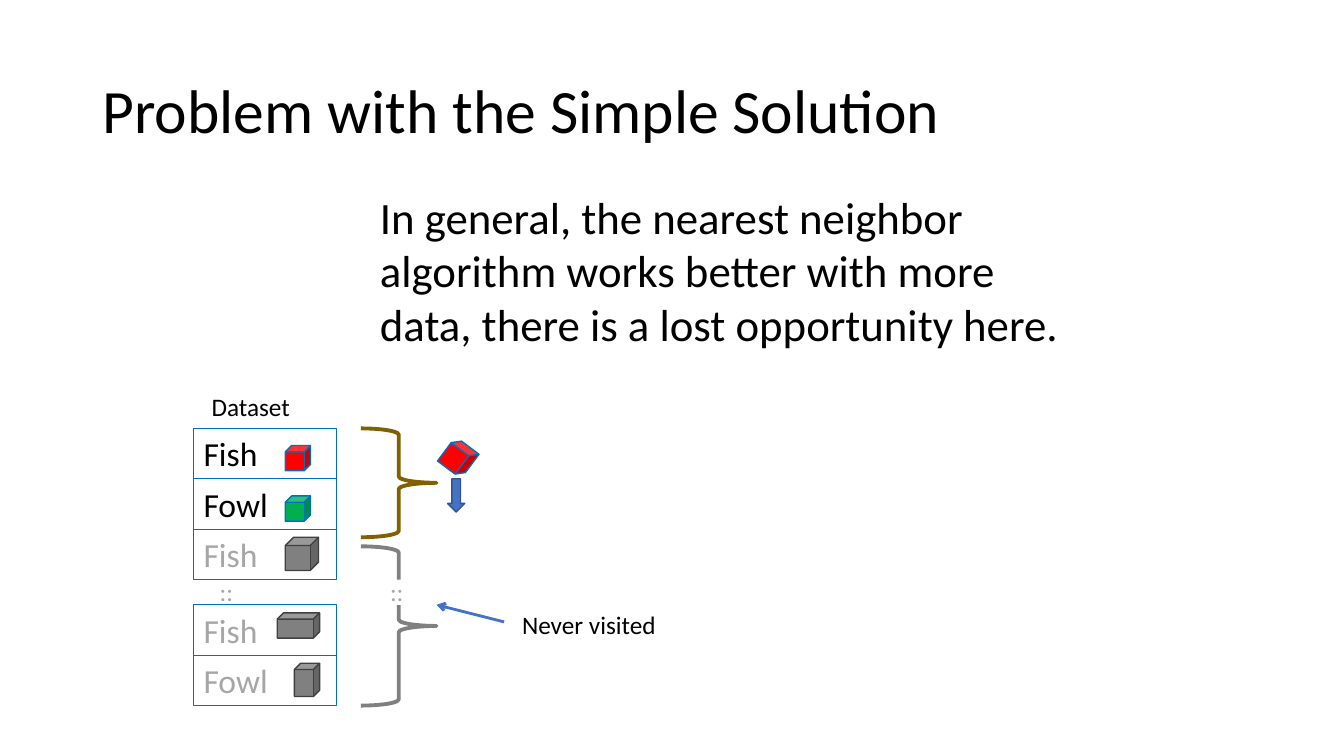
"""Build the slide about the problem with the simple nearest neighbor solution."""
from lxml import etree
from pptx import Presentation
from pptx.dml.color import RGBColor
from pptx.enum.shapes import MSO_CONNECTOR, MSO_SHAPE
from pptx.enum.text import MSO_ANCHOR, PP_ALIGN
from pptx.oxml.ns import qn
from pptx.util import Inches, Pt

COLORS = {
    "black": "000000", "white": "FFFFFF", "faded": "A6A6A6", "gray": "808080",
    "dark gray": "404040", "blue": "0070C0", "red": "FF0000", "green": "00B050",
    "arrow": "4472C4", "arrow edge": "325491", "brown": "806000",
}

presentation = Presentation()
presentation.slide_width = Inches(13.33)
presentation.slide_height = Inches(7.5)
slide = presentation.slides.add_slide(presentation.slide_layouts[6])


def write(shape, text, size, color="black", wrap=True, anchor=MSO_ANCHOR.TOP):
    frame = shape.text_frame
    frame.word_wrap = wrap
    frame.vertical_anchor = anchor
    paragraph = frame.paragraphs[0]
    paragraph.text = text
    paragraph.alignment = PP_ALIGN.LEFT
    paragraph.font.name = "Calibri"
    paragraph.font.size = Pt(size)
    paragraph.font.color.rgb = RGBColor.from_string(COLORS[color])
    return paragraph


def draw(kind, box, fill=None, line=None, width=1):
    shape = slide.shapes.add_shape(kind, *map(Inches, box))
    shape.shadow.inherit = False
    if fill:
        shape.fill.solid()
        shape.fill.fore_color.rgb = RGBColor.from_string(COLORS[fill])
    else:
        shape.fill.background()
    if line:
        shape.line.color.rgb = RGBColor.from_string(COLORS[line])
        shape.line.width = Pt(width)
    else:
        shape.line.fill.background()
    return shape


title = slide.shapes.add_textbox(Inches(0.92), Inches(0.4), Inches(11.5), Inches(1.45))
write(title, "Problem with the Simple Solution", 44, anchor=MSO_ANCHOR.MIDDLE).line_spacing = 0.9

rows = [
    ("Fowl", 4.75, "black"),
    ("Fish", 5.25, "faded"),
    ("Fish", 6, "faded"),
    ("Fowl", 6.5, "faded"),
    ("Fish", 4.25, "black"),
]
for label, top, color in rows:
    row = draw(MSO_SHAPE.RECTANGLE, (1.92, top, 1.42, 0.5), line="blue", width=0.75)
    write(row, label, 24, color)

cubes = [
    ((2.83, 4.42, 0.25, 0.25), "red", "blue", 0),
    ((2.83, 4.92, 0.25, 0.25), "green", "blue", 0),
    ((2.83, 5.33, 0.33, 0.33), "gray", "dark gray", 0),
    ((2.75, 6.08, 0.42, 0.25), "gray", "dark gray", 0),
    ((2.92, 6.58, 0.25, 0.33), "gray", "dark gray", 0),
    ((4.4, 4.39, 0.29, 0.3), "red", "blue", 36.8),
]
for box, fill, line, rotation in cubes:
    draw(MSO_SHAPE.CUBE, box, fill, line).rotation = rotation

draw(MSO_SHAPE.DOWN_ARROW, (4.44, 4.75, 0.17, 0.33), "arrow", "arrow edge")
for top, height, color in [(4.25, 1.08, "brown"), (5.42, 1.58, "gray")]:
    draw(MSO_SHAPE.RIGHT_BRACE, (3.58, top, 0.75, height), line=color, width=2.75)
draw(MSO_SHAPE.RECTANGLE, (3.83, 5.75, 0.17, 0.25), "white")

labels = [
    ("Dataset", 2, 3.83, 0.99, "black"),
    ("::", 2.08, 5.67, 0.34, "faded"),
    ("::", 3.77, 5.67, 0.34, "faded"),
    ("Never visited", 5.08, 6, 1.54, "black"),
]
for text, left, top, width, color in labels:
    label_box = slide.shapes.add_textbox(Inches(left), Inches(top), Inches(width), Inches(0.4))
    write(label_box, text, 18, color, wrap=False)

pointer = slide.shapes.add_connector(
    MSO_CONNECTOR.STRAIGHT, Inches(5), Inches(6.17), Inches(4.33), Inches(6))
pointer.line.color.rgb = RGBColor.from_string(COLORS["arrow"])
pointer.line.width = Pt(2)
etree.SubElement(pointer.line._get_or_add_ln(), qn("a:tailEnd"), type="arrow")
etree.SubElement(pointer._element.spPr, qn("a:effectLst"))

message = slide.shapes.add_textbox(Inches(3.67), Inches(1.83), Inches(7), Inches(1.72))
write(message, "In general, the nearest neighbor algorithm works better with more data, "
      "there is a lost opportunity here.", 32)

presentation.save("out.pptx")
